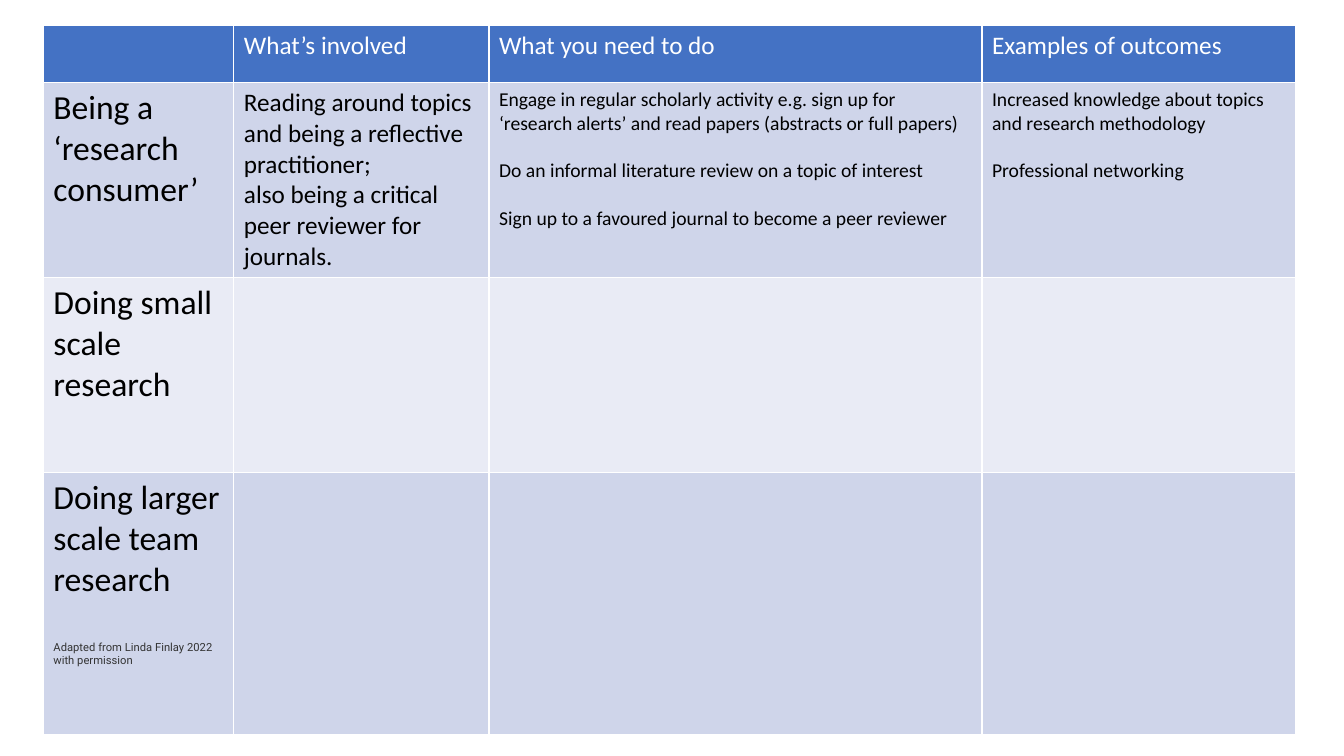
import pptx
import pptx.dml.color
import pptx.util

Inches = pptx.util.Inches
Pt = pptx.util.Pt

COLUMN_WIDTHS = [1.89, 2.53, 4.89, 3.11]
ROW_HEIGHTS = [0.57, 1.93, 1.94, 2.6]
ROW_FILLS = ["4472C4", "CFD5EA", "E9EBF5", "CFD5EA"]
BODY_SIZES = [24, 18, 14, 14]

HEADINGS = ["", "What’s involved", "What you need to do", "Examples of outcomes"]
BODY = [
    [
        ["Being a ‘research consumer’"],
        [
            "Reading around topics and being a reflective practitioner;",
            "also being a critical peer reviewer for journals.",
        ],
        [
            "Engage in regular scholarly activity e.g. sign up for "
            "‘research alerts’ and read papers (abstracts or full papers)",
            "Do an informal literature review on a topic of interest",
            "Sign up to a favoured journal to become a peer reviewer",
        ],
        [
            "Increased knowledge about topics and research methodology",
            "Professional networking",
        ],
    ],
    [["Doing small scale research"]],
    [["Doing larger scale team research"]],
]
CREDIT = "Adapted from Linda Finlay 2022 with permission"


def rgb(value):
    return pptx.dml.color.RGBColor.from_string(value)


def format_paragraph(p, text, size, color="000000", font="Calibri", before=0):
    p.text = text
    p.font.size = Pt(size)
    p.font.name = font
    p.font.bold = False
    p.font.color.rgb = rgb(color)
    p.space_before = Pt(before)


def fill_cell(cell, texts, size, gap):
    tf = cell.text_frame
    for i, text in enumerate(texts):
        p = tf.paragraphs[0] if i == 0 else tf.add_paragraph()
        format_paragraph(p, text, size, before=gap if i else 0)


def add_research_table(s, left, top):
    table = s.shapes.add_table(
        len(ROW_HEIGHTS), len(COLUMN_WIDTHS), Inches(left), Inches(top),
        Inches(sum(COLUMN_WIDTHS)), Inches(sum(ROW_HEIGHTS)),
    ).table
    for column, width in zip(table.columns, COLUMN_WIDTHS):
        column.width = Inches(width)
    for row, height, color in zip(table.rows, ROW_HEIGHTS, ROW_FILLS):
        row.height = Inches(height)
        for cell in row.cells:
            cell.fill.solid()
            cell.fill.fore_color.rgb = rgb(color)

    for c, heading in enumerate(HEADINGS):
        if heading:
            p = table.cell(0, c).text_frame.paragraphs[0]
            format_paragraph(p, heading, 18, "FFFFFF")
    for r, cells in enumerate(BODY, start=1):
        for c, texts in enumerate(cells):
            size = BODY_SIZES[c]
            fill_cell(table.cell(r, c), texts, size, 17 if size == 14 else 0)

    p = table.cell(3, 0).text_frame.add_paragraph()
    format_paragraph(p, CREDIT, 8, "333333", "Roboto", before=29)


def main():
    prs = pptx.Presentation()
    prs.slide_width = Inches(13.33)
    prs.slide_height = Inches(7.5)
    s = prs.slides.add_slide(prs.slide_layouts[6])
    add_research_table(s, 0.43, 0.25)
    prs.save("out.pptx")


if __name__ == "__main__":
    main()
